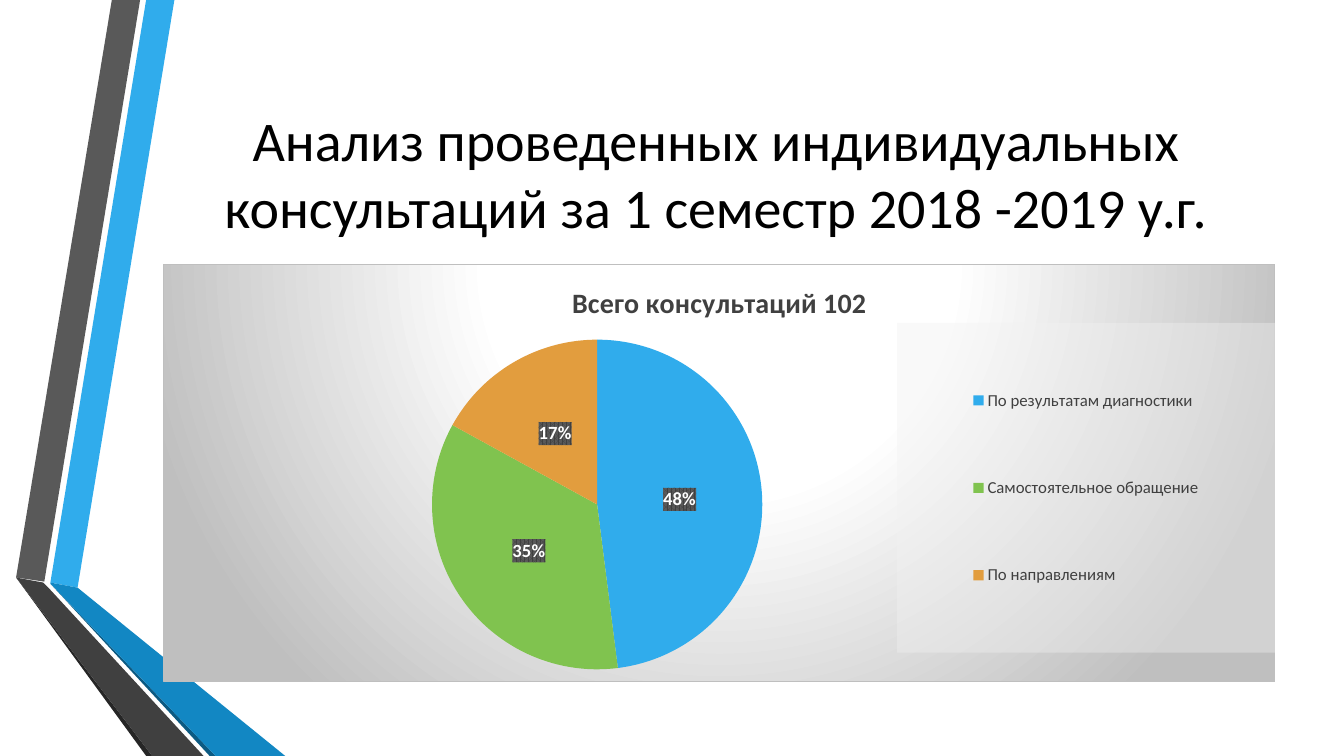
import lxml.etree
import pptx
import pptx.chart.data
import pptx.dml.color
import pptx.enum.chart
import pptx.enum.text
import pptx.oxml
import pptx.oxml.ns
import pptx.util
from pptx.util import Inches

COLORS = {
    "blue": "30ACEC", "deep_blue": "1287C3", "navy": "0C5A82",
    "gray": "595959", "charcoal": "404040", "dark": "262626",
    "green": "80C34F", "orange": "E29D3E",
    "silver": "BFBFBF", "pale": "F2F2F2", "white": "FFFFFF", "black": "000000",
}
RIBBONS = [
    ("blue", [(0.5, 5.78), (0.77, 5.83), (1.73, 0), (1.45, 0)]),
    ("gray", [(1.39, 0), (1.11, 0), (0.16, 5.73), (0.44, 5.77)]),
    ("dark", [(0.16, 5.73), (1.45, 7.5), (1.51, 7.5)]),
    ("navy", [(0.5, 5.79), (2.08, 7.5), (2.14, 7.5)]),
    ("deep_blue", [(0.5, 5.79), (2.14, 7.5), (2.83, 7.5), (0.77, 5.83), (0.5, 5.78)]),
    ("charcoal", [(2.02, 7.5), (0.48, 5.83), (0.43, 5.78), (0.16, 5.73), (1.51, 7.5)]),
]
CONSULTATIONS = [
    ("По результатам диагностики", 48, "blue"),
    ("Самостоятельное обращение", 35, "green"),
    ("По направлениям", 17, "orange"),
]


def rgb(name):
    return pptx.dml.color.RGBColor.from_string(COLORS[name])


def chart_xml(tag, content):
    return pptx.oxml.parse_xml(
        f'<c:{tag} {pptx.oxml.ns.nsdecls("c", "a")}>{content}</c:{tag}>')


def color_xml(name, inner=""):
    return f'<a:srgbClr val="{COLORS[name]}">{inner}</a:srgbClr>'


def manual_layout(x, y, width, height, inner=False):
    """Place a chart part by fractions of the chart area."""
    target = '<c:layoutTarget val="inner"/>' if inner else ""
    return chart_xml("layout", (
        f'<c:manualLayout>{target}<c:xMode val="edge"/><c:yMode val="edge"/>'
        f'<c:x val="{x}"/><c:y val="{y}"/><c:w val="{width}"/><c:h val="{height}"/>'
        '</c:manualLayout>'))


def replace_layout(parent, layout, position):
    for old in parent.findall(pptx.oxml.ns.qn("c:layout")):
        parent.remove(old)
    parent.insert(position, layout)


class SlideBuilder:
    font_name = "Calibri"

    def __init__(self, deck):
        self.slide = deck.slides.add_slide(deck.slide_layouts[5])

    def style_font(self, font, size, color, bold=False):
        font.name = self.font_name
        font.size = pptx.util.Pt(size)
        font.bold = bold
        font.color.rgb = rgb(color)

    def ribbon(self, color, points):
        corners = [(Inches(x), Inches(y)) for x, y in points]
        builder = self.slide.shapes.build_freeform(*corners[0])
        builder.add_line_segments(corners[1:], close=True)
        shape = builder.convert_to_shape()
        shape.shadow.inherit = False
        shape.fill.solid()
        shape.fill.fore_color.rgb = rgb(color)
        shape.line.fill.background()

    def title(self, text, left, top, width, height):
        box = self.slide.shapes.title
        box.left, box.top = Inches(left), Inches(top)
        box.width, box.height = Inches(width), Inches(height)
        frame = box.text_frame
        frame.text = text
        frame.word_wrap = True
        frame.vertical_anchor = pptx.enum.text.MSO_ANCHOR.MIDDLE
        para = frame.paragraphs[0]
        para.alignment = pptx.enum.text.PP_ALIGN.CENTER
        self.style_font(para.runs[0].font, 40, "black")

    def pie(self, title, rows, left, top, width, height):
        data = pptx.chart.data.CategoryChartData()
        data.categories = [name for name, _, _ in rows]
        data.add_series("Series 1", [value for _, value, _ in rows])
        chart = self.slide.shapes.add_chart(
            pptx.enum.chart.XL_CHART_TYPE.PIE, Inches(left), Inches(top),
            Inches(width), Inches(height), data).chart
        self.style_font(chart.font, 10, "black")
        chart.has_title = True
        chart.chart_title.text_frame.text = title
        heading = chart.chart_title.text_frame.paragraphs[0].runs[0]
        self.style_font(heading.font, 20, "charcoal", bold=True)
        plot = chart.plots[0]
        plot.vary_by_categories = True
        series = plot.series[0]
        for index, (_, _, color) in enumerate(rows):
            fill = series.points[index].format.fill
            fill.solid()
            fill.fore_color.rgb = rgb(color)
        self.percent_labels(series.data_labels)
        self.legend(chart)
        plot_area = chart.element.find(".//" + pptx.oxml.ns.qn("c:plotArea"))
        replace_layout(plot_area, manual_layout(0.24, 0.18, 0.3, 0.79, inner=True), 0)
        self.chart_background(chart)

    def percent_labels(self, labels):
        labels.show_percentage = True
        labels.show_value = False
        labels.number_format = "0%"
        labels.number_format_is_linked = False
        labels.position = pptx.enum.chart.XL_LABEL_POSITION.CENTER
        self.style_font(labels.font, 13.3, "white", bold=True)
        pattern = (f'<a:pattFill prst="pct75"><a:fgClr>{color_xml("charcoal")}</a:fgClr>'
                   f'<a:bgClr>{color_xml("gray")}</a:bgClr></a:pattFill>')
        text = labels.font._element.getparent().getparent().getparent()
        text.addprevious(chart_xml("spPr", pattern))

    def legend(self, chart):
        chart.has_legend = True
        chart.legend.position = pptx.enum.chart.XL_LEGEND_POSITION.RIGHT
        chart.legend.include_in_layout = False
        self.style_font(chart.legend.font, 12, "charcoal")
        legend = chart.element.find(".//" + pptx.oxml.ns.qn("c:legend"))
        replace_layout(legend, manual_layout(0.66, 0.14, 0.34, 0.79), 1)
        fill = color_xml("pale", '<a:alpha val="39000"/>')
        legend.find(pptx.oxml.ns.qn("c:txPr")).addprevious(
            chart_xml("spPr", f"<a:solidFill>{fill}</a:solidFill>"))

    def chart_background(self, chart):
        """Fill the chart area with a radial gradient and a thin border."""
        stops = "".join(
            f'<a:gs pos="{percent * 1000}">{color_xml(color)}</a:gs>'
            for percent, color in [(0, "white"), (39, "white"), (100, "silver")])
        area = chart_xml("spPr", (
            f'<a:gradFill><a:gsLst>{stops}</a:gsLst><a:path path="circle">'
            '<a:fillToRect l="50000" t="-80000" r="50000" b="180000"/></a:path></a:gradFill>'
            f'<a:ln w="9525"><a:solidFill>{color_xml("silver")}</a:solidFill></a:ln>'))
        chart.element.find(pptx.oxml.ns.qn("c:chart")).addnext(area)


def main():
    deck = pptx.Presentation()
    deck.slide_width, deck.slide_height = Inches(13.33), Inches(7.5)
    builder = SlideBuilder(deck)
    for color, points in RIBBONS:
        builder.ribbon(color, points)
    builder.title("Анализ проведенных индивидуальных консультаций за 1 семестр 2018 -2019 у.г.",
                  1.62, 0.75, 10.96, 1.92)
    builder.pie("Всего консультаций 102", CONSULTATIONS, 1.62, 2.62, 11.03, 4.15)
    deck.save("out.pptx")


if __name__ == "__main__":
    main()
